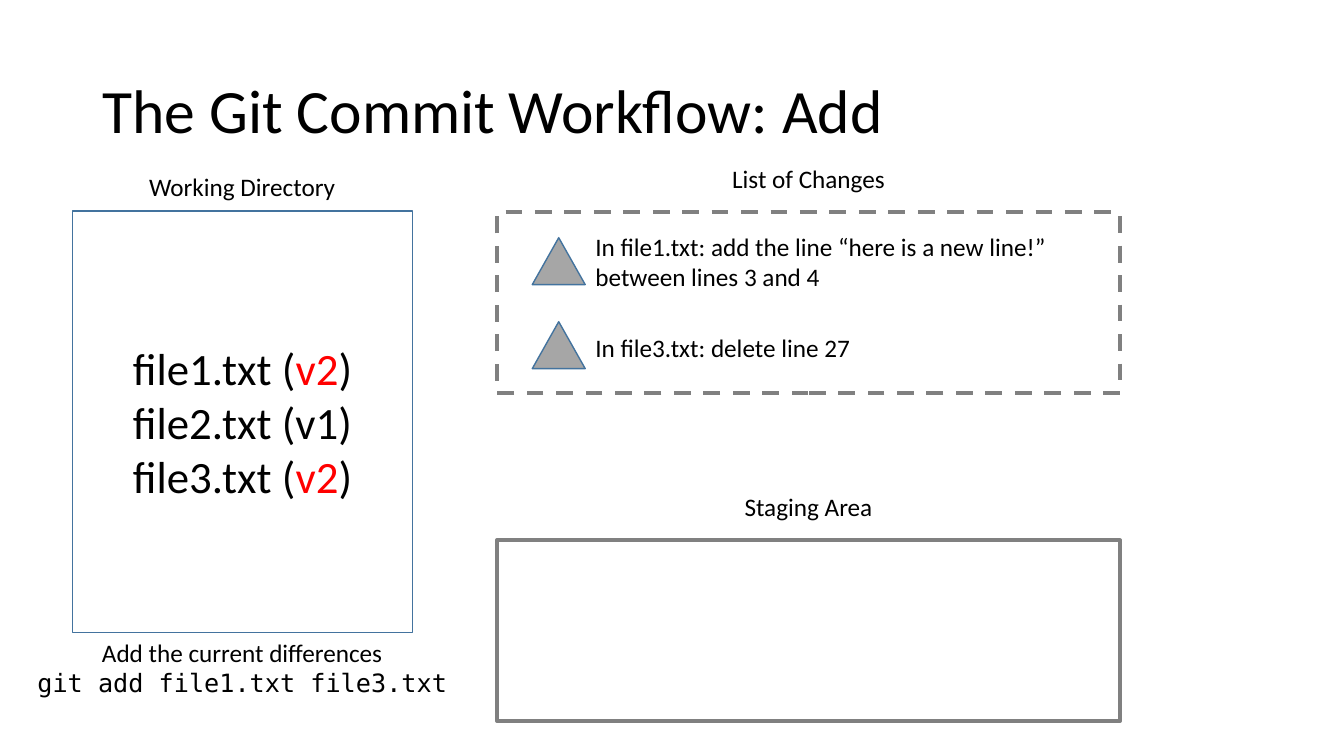
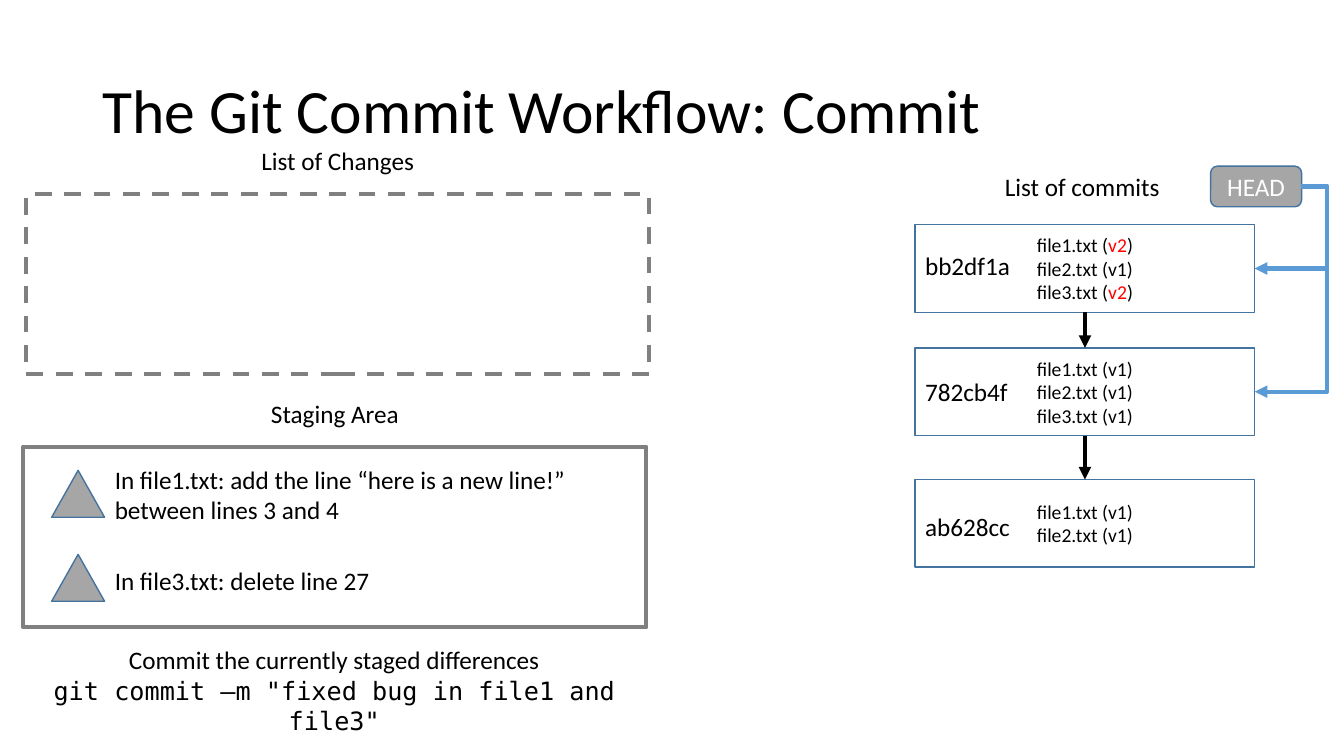
from lxml.etree import SubElement
from pptx import Presentation
from pptx.dml.color import RGBColor
from pptx.enum.dml import MSO_LINE
from pptx.enum.shapes import MSO_CONNECTOR, MSO_SHAPE
from pptx.enum.text import MSO_ANCHOR, PP_ALIGN
from pptx.oxml.ns import qn
from pptx.util import Pt

# Shared style
FONT, CODE_FONT = "Calibri", "DejaVu Sans Mono"
BLACK, WHITE, RED = "000000", "FFFFFF", "FF0000"
GRAY, LIGHT_GRAY, EDGE, BLUE = "808080", "A6A6A6", "43739E", "5B9BD5"
PANEL_WIDTH, PANEL_HEIGHT = 445, 129
LABEL_WIDTH, LABEL_HEIGHT = 214, 29
TOP, LEFT, BOTTOM, RIGHT = range(4)

# Content
CHANGES = [
    "In file1.txt: add the line “here is a new line!” between lines 3 and 4",
    "In file3.txt: delete line 27",
]
NEW_FILES = ["file1.txt (v2)", "file2.txt (v1)", "file3.txt (v2)"]
OLD_FILES = ["file1.txt (v1)", "file2.txt (v1)", "file3.txt (v1)"]
ADD_NOTE = ["Add the current differences", "git add file1.txt file3.txt"]
COMMIT_NOTE = ["Commit the currently staged differences",
               'git commit –m "fixed bug in file1 and file3"']
COMMITS = [  # hash, files, top of box, top of hash
    ("bb2df1a", NEW_FILES, 160.5, 175),
    ("782cb4f", OLD_FILES, 248.5, 265),
    ("ab628cc", OLD_FILES[:2], 342.5, 361.5),
]


def color(value):
    return RGBColor.from_string(value)


def write_text(shape, lines, size=18, fill=BLACK, align=PP_ALIGN.CENTER,
               anchor=MSO_ANCHOR.MIDDLE, spacing=None):
    """Fill a shape with lines; version v2 is red and git commands are code."""
    frame = shape.text_frame
    frame.word_wrap = True
    frame.vertical_anchor = anchor
    for number, line in enumerate(lines):
        para = frame.add_paragraph() if number else frame.paragraphs[0]
        para.alignment = align
        para.line_spacing = spacing
        for part in line.partition("v2"):
            if part:
                span = para.add_run()
                span.text = part
                span.font.size = Pt(size)
                span.font.name = CODE_FONT if line.startswith("git ") else FONT
                span.font.color.rgb = color(RED if part == "v2" else fill)


def add_text(page, lines, left, top, width, height=LABEL_HEIGHT, **style):
    box = page.shapes.add_textbox(Pt(left), Pt(top), Pt(width), Pt(height))
    write_text(box, lines, anchor=MSO_ANCHOR.TOP, **style)


def add_box(page, left, top, width, height, kind=MSO_SHAPE.RECTANGLE,
            fill=None, line=EDGE, weight=1):
    box = page.shapes.add_shape(kind, Pt(left), Pt(top), Pt(width), Pt(height))
    box.shadow.inherit = False
    if fill:
        box.fill.solid()
        box.fill.fore_color.rgb = color(fill)
    else:
        box.fill.background()
    box.line.color.rgb = color(line)
    box.line.width = Pt(weight)
    return box


def add_panel(page, title, left, top, dashed=False):
    panel = add_box(page, left, top, PANEL_WIDTH, PANEL_HEIGHT,
                    fill=WHITE, line=GRAY, weight=3)
    if dashed:
        panel.line.dash_style = MSO_LINE.DASH
    add_text(page, [title], left + (PANEL_WIDTH - LABEL_WIDTH) / 2, top - 38.4,
             LABEL_WIDTH)


def add_changes(page, left, top):
    for row, (change, text_shift) in enumerate(zip(CHANGES, (-8, 4.3))):
        y = top + row * 60
        add_box(page, left, y, 37.8, 33.5, kind=MSO_SHAPE.ISOSCELES_TRIANGLE,
                fill=LIGHT_GRAY)
        add_text(page, [change], left + 38, y + text_shift, 356,
                 align=PP_ALIGN.LEFT)


def add_arrow(page, start, start_side, end, end_side, line=BLACK,
              kind=MSO_CONNECTOR.STRAIGHT, bend=None):
    arrow = page.shapes.add_connector(kind, 0, 0, 0, 0)
    arrow.begin_connect(start, start_side)
    arrow.end_connect(end, end_side)
    arrow.line.color.rgb = color(line)
    arrow.line.width = Pt(3)
    properties = arrow._element.spPr
    SubElement(properties.find(qn("a:ln")), qn("a:tailEnd"), type="triangle")
    SubElement(properties, qn("a:effectLst"))
    if bend is not None:
        guides = properties.find(qn("a:prstGeom")).get_or_add_avLst()
        SubElement(guides, qn("a:gd"), name="adj1", fmla=f"val {bend}")


def add_page(deck, title):
    page = deck.slides.add_slide(deck.slide_layouts[5])
    shape = page.shapes.title
    shape.left, shape.top = Pt(66), Pt(28.8)
    shape.width, shape.height = Pt(844.6), Pt(104.4)
    write_text(shape, [title], size=44, align=PP_ALIGN.LEFT, spacing=0.9)
    return page


def build_add(deck):
    page = add_page(deck, "The Git Commit Workflow: Add")
    add_panel(page, "Staging Area", 355, 386)
    add_panel(page, "List of Changes", 355, 151.7, dashed=True)
    add_changes(page, 380.2, 169.8)

    # Working directory
    add_text(page, ["Working Directory"], 66, 119, LABEL_WIDTH)
    write_text(add_box(page, 52, 150.7, 242.6, 301), NEW_FILES, size=32)
    add_text(page, ADD_NOTE, 19, 451.5, 308, 51)


def build_commit(deck):
    page = add_page(deck, "The Git Commit Workflow: Commit")
    add_panel(page, "Staging Area", 16.7, 319)
    add_panel(page, "List of Changes", 18.7, 138.4, dashed=True)
    add_changes(page, 36.9, 336)
    add_text(page, COMMIT_NOTE, 8, 457, 461.5, 51)

    # Commit history
    add_text(page, ["List of commits"], 666, 119, LABEL_WIDTH)
    boxes = []
    for name, files, top, name_top in COMMITS:
        box = add_box(page, 653.7, top, 242.6, 62.6)
        write_text(box, files, size=14)
        add_text(page, [name], 653.7, name_top, 91, align=PP_ALIGN.LEFT)
        boxes.append(box)
    for newer, older in zip(boxes, boxes[1:]):
        add_arrow(page, newer, BOTTOM, older, TOP)

    # Head moves from the old commit to the new one
    head = add_box(page, 864.7, 118.7, 65, 29, fill=LIGHT_GRAY,
                   kind=MSO_SHAPE.ROUNDED_RECTANGLE)
    write_text(head, ["HEAD"], fill=WHITE)
    for target in (boxes[1], boxes[0]):
        add_arrow(page, head, RIGHT, target, RIGHT, line=BLUE,
                  kind=MSO_CONNECTOR.ELBOW, bend=-54800)


def main():
    deck = Presentation()
    deck.slide_width, deck.slide_height = Pt(960), Pt(540)
    build_add(deck)
    build_commit(deck)
    deck.save("out.pptx")


if __name__ == "__main__":
    main()
